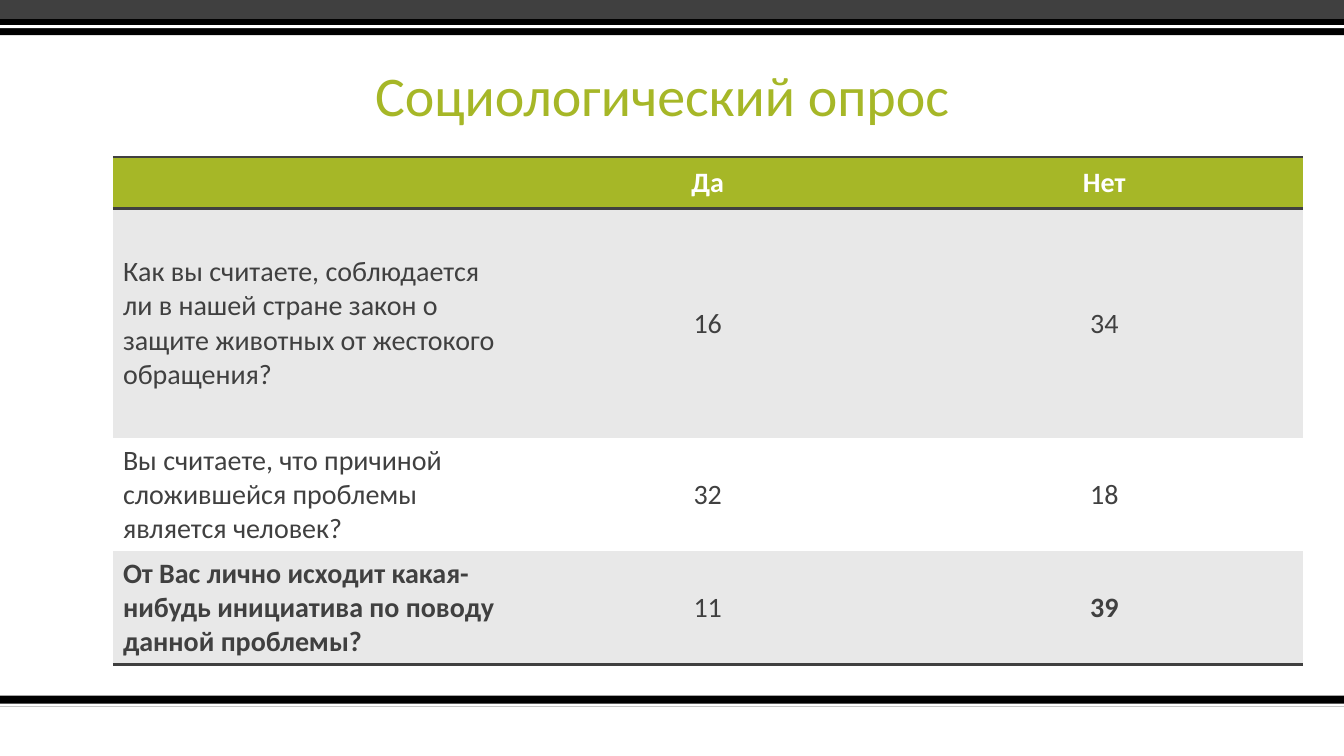
from lxml import etree
from pptx import Presentation
from pptx import util as u
from pptx.dml.color import RGBColor
from pptx.enum import text
from pptx.enum.shapes import MSO_SHAPE
from pptx.oxml.ns import qn

GREEN, DARK, GREY, WHITE, BLACK = "A6B727", "404040", "E8E8E8", "FFFFFF", "000000"


def paint(fill, color):
    fill.solid()
    fill.fore_color.rgb = RGBColor.from_string(color)


def write(frame, words, size=20, color=DARK, bold=False,
          align=text.PP_ALIGN.LEFT, spacing=1.0):
    paragraph = frame.paragraphs[0]
    paragraph.alignment = align
    paragraph.line_spacing = spacing
    run = paragraph.add_run()
    run.text = words
    run.font.name = "Calibri"
    run.font.size = u.Pt(size)
    run.font.bold = bold
    paint(run.font.fill, color)


prs = Presentation()
prs.slide_width, prs.slide_height = u.Inches(13.33), u.Inches(7.5)
slide = prs.slides.add_slide(prs.slide_layouts[5])
paint(slide.background.fill, WHITE)

# Stripes at the bottom and top edges: top, height, colour
for top, height, color in [(6.9, 0.11, BLACK), (6.98, 0.03, WHITE),
                           (0, 0.19, DARK), (0.19, 0.16, BLACK), (0.25, 0.03, WHITE)]:
    stripe = slide.shapes.add_shape(MSO_SHAPE.RECTANGLE, 0, u.Inches(top),
                                    prs.slide_width, u.Inches(height))
    stripe.shadow.inherit = False
    paint(stripe.fill, color)
    stripe.line.fill.background()

# Title
title = slide.shapes.title
title.left, title.top = u.Inches(3.62), u.Inches(0.16)
title.width, title.height = u.Inches(10), u.Inches(1.17)
title.text_frame.vertical_anchor = text.MSO_ANCHOR.BOTTOM
write(title.text_frame, "Социологический опрос", size=40, color=GREEN, spacing=0.9)

# Survey table
survey = [
    ("", "Да", "Нет"),
    ("Как вы считаете, соблюдается ли в нашей стране закон о защите животных "
     "от жестокого обращения?", "16", "34"),
    ("Вы считаете, что причиной сложившейся проблемы является человек?", "32", "18"),
    ("От Вас лично исходит какая-нибудь инициатива по поводу данной проблемы?",
     "11", "39"),
]
row_heights = [0.51, 2.28, 1.12, 1.12]
row_fills = [GREEN, GREY, WHITE, GREY]
bold_cells = {(0, 1), (0, 2), (3, 0), (3, 2)}
ruled_edges = {0, 1, len(survey)}

table = slide.shapes.add_table(len(survey), 3, u.Inches(1.12), u.Inches(1.56),
                               u.Inches(11.8), u.Inches(sum(row_heights))).table
for column in table.columns:
    column.width = u.Inches(11.8 / 3)

for r, answers in enumerate(survey):
    table.rows[r].height = u.Inches(row_heights[r])
    for c, words in enumerate(answers):
        cell = table.cell(r, c)
        cell.vertical_anchor = text.MSO_ANCHOR.MIDDLE
        paint(cell.fill, row_fills[r])
        write(cell.text_frame, words, color=DARK if r else WHITE,
              bold=(r, c) in bold_cells,
              align=text.PP_ALIGN.CENTER if c else text.PP_ALIGN.LEFT)

        # Rules above and below the header and under the last row
        properties = cell._tc.get_or_add_tcPr()
        ruled = [("lnL", False), ("lnR", False),
                 ("lnT", r in ruled_edges), ("lnB", r + 1 in ruled_edges)]
        for place, (side, visible) in enumerate(ruled):
            border = etree.Element(qn("a:" + side), w=str(u.Pt(2) if visible else 0))
            properties.insert(place, border)
            if visible:
                fill = etree.SubElement(border, qn("a:solidFill"))
                etree.SubElement(fill, qn("a:srgbClr"), val=DARK)
            else:
                etree.SubElement(border, qn("a:noFill"))

prs.save("out.pptx")
